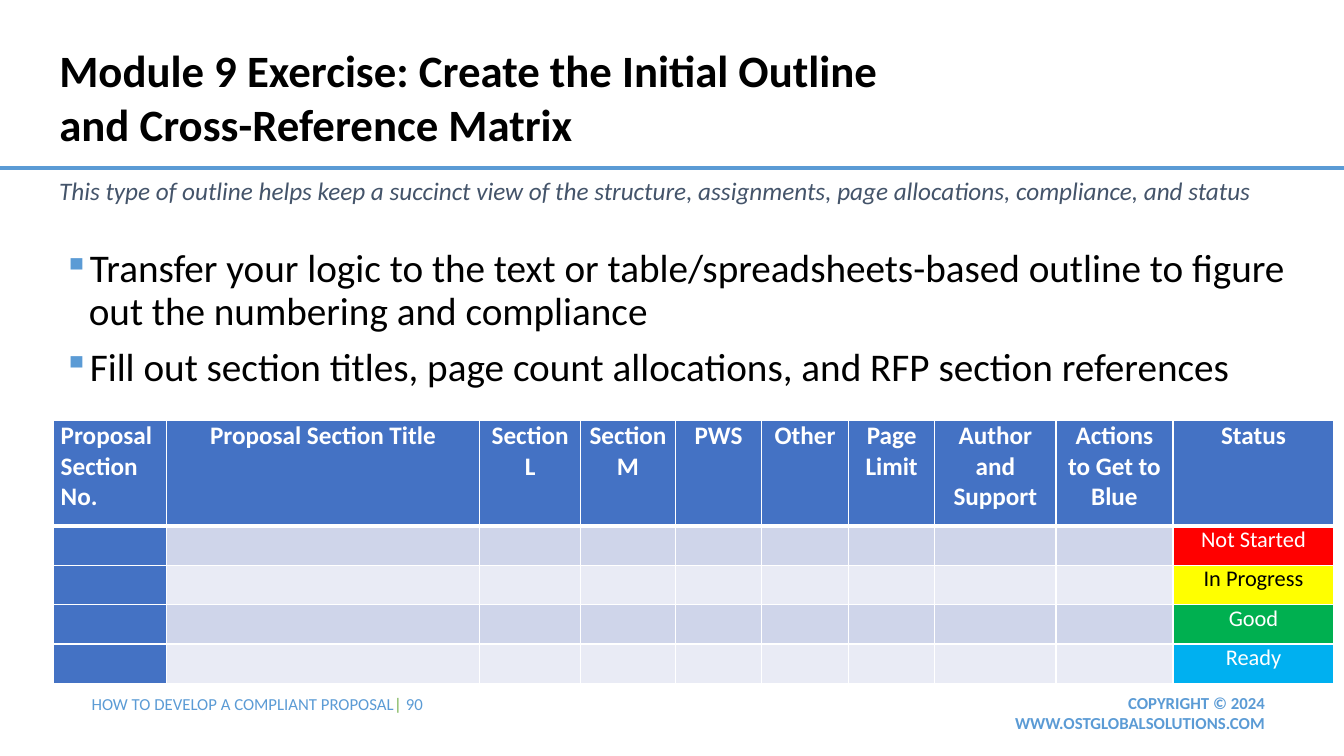
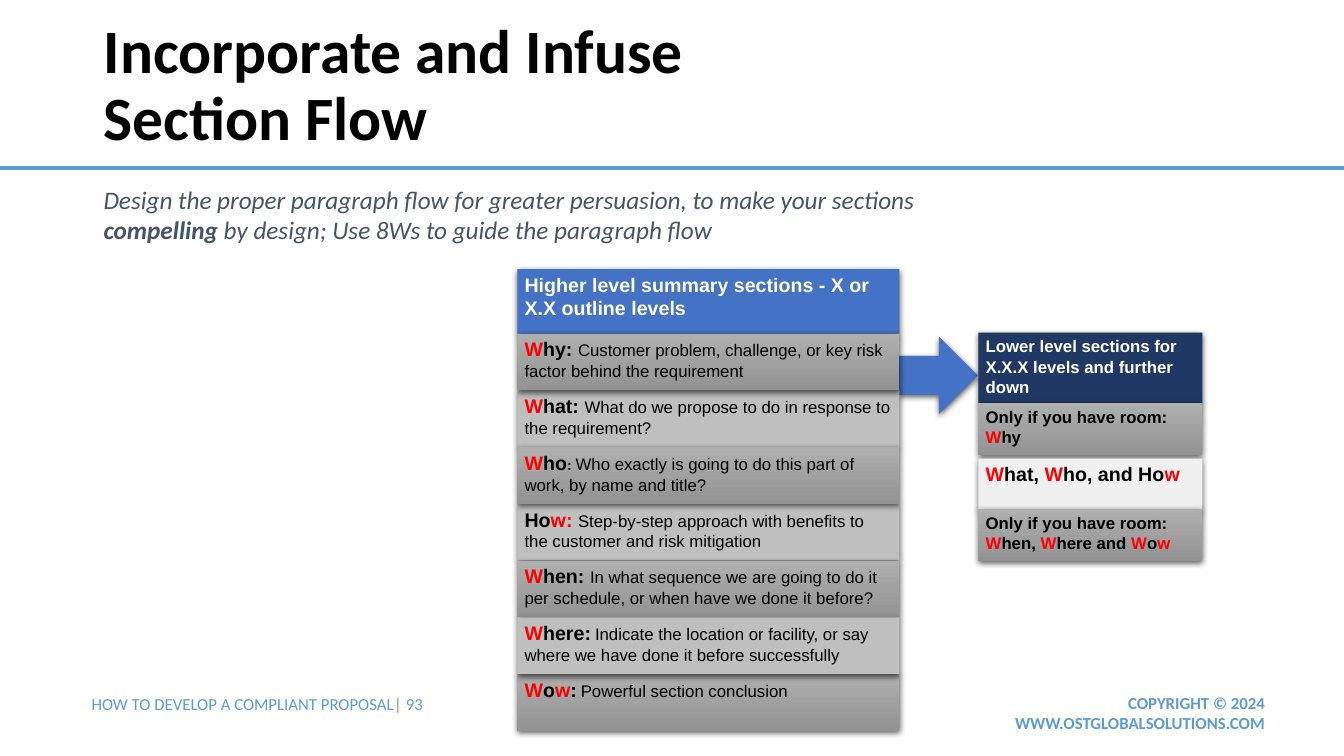
from pptx import Presentation
from pptx.dml.color import RGBColor
from pptx.enum.shapes import MSO_CONNECTOR, MSO_SHAPE
from pptx.enum.text import MSO_ANCHOR, MSO_AUTO_SIZE, PP_ALIGN
from pptx.oxml import parse_xml
from pptx.oxml.ns import nsdecls, qn
from pptx.util import Cm, Pt

BLACK, WHITE, RED = "000000", "FFFFFF", "FF0000"
SKY, BLUE, NAVY, SLATE, GREEN = "5B9BD5", "4472C4", "203864", "44546A", "70AD47"
SILVER, PALE = "BFBFBF", "F1F0F0"
STEEL = ("AFAFAF", "939393")  # gradient, top to bottom


def rgb(value):
    return RGBColor.from_string(value)


def write(para, spans, font="Calibri", italic=False):
    """Add runs given as (text, size, colour, bold)."""
    for text, size, color, bold in spans:
        span = para.add_run()
        span.text = text
        span.font.name, span.font.size = font, Pt(size)
        span.font.bold, span.font.italic = bold, italic
        span.font.color.rgb = rgb(color)


deck = Presentation()
deck.slide_width, deck.slide_height = Cm(33.87), Cm(19.05)

# Title, rule, subtitle and footers of every page
page_plans = [
    dict(number="90", title="Module 9 Exercise: Create the Initial Outline and Cross-Reference Matrix",
         title_at=(1.24, 0.84, 22.86, 3.18), title_size=32, title_spacing=1.0,
         subtitle_at=(1.24, 4.29, 32.6, 1.02),
         subtitle=[("This type of outline helps keep a succinct view of the structure, assignments, "
                    "page allocations, compliance, and status", 18, SLATE, False)]),
    dict(number="93", title="Incorporate and Infuse Section Flow",
         title_at=(2.36, 1.35, 19.4, 1.68), title_size=44, title_spacing=0.9,
         subtitle_at=(2.36, 4.52, 23.6, 1.8),
         subtitle=[("Design the proper paragraph flow for greater persuasion, to make your sections ",
                    18, SLATE, False),
                   ("compelling", 18, SLATE, True),
                   (" by design; Use 8Ws to guide the paragraph flow", 18, SLATE, False)]),
]
pages = []
for plan in page_plans:
    page = deck.slides.add_slide(deck.slide_layouts[5])
    pages.append(page)

    rule = page.shapes.add_connector(MSO_CONNECTOR.STRAIGHT, 0, Cm(4.24), deck.slide_width, Cm(4.24))
    rule.line.color.rgb = rgb(SKY)
    rule.line.width = Pt(3)
    rule._element.spPr.append(parse_xml(f"<a:effectLst {nsdecls('a')}/>"))

    title = page.shapes.title
    title.left, title.top, title.width, title.height = map(Cm, plan["title_at"])
    title.text_frame.word_wrap = True
    title.text_frame.auto_size = MSO_AUTO_SIZE.NONE
    title.text_frame.vertical_anchor = MSO_ANCHOR.MIDDLE
    para = title.text_frame.paragraphs[0]
    para.alignment = PP_ALIGN.LEFT
    para.line_spacing = plan["title_spacing"]
    write(para, [(plan["title"], plan["title_size"], BLACK, True)])

    texts = [
        (plan["subtitle_at"], PP_ALIGN.LEFT, True, plan["subtitle"]),
        ((2.06, 17.35, 12.24, 0.76), PP_ALIGN.LEFT, False,
         [("HOW TO DEVELOP A COMPLIANT PROPOSAL", 12, SKY, False),
          ("| ", 12, GREEN, False), (plan["number"], 12, SKY, False)]),
        ((25.2, 17.32, 6.93, 1.27), PP_ALIGN.RIGHT, False,
         [("COPYRIGHT © 2024 WWW.OSTGLOBALSOLUTIONS.COM", 12, SKY, True)]),
    ]
    for place, alignment, italic, spans in texts:
        box = page.shapes.add_textbox(*map(Cm, place))
        box.text_frame.word_wrap = True
        para = box.text_frame.paragraphs[0]
        para.alignment = alignment
        write(para, spans, italic=italic)

outline_page, flow_page = pages

# Outline page: bullets
bullets = [
    "Transfer your logic to the text or table/spreadsheets-based outline to figure out "
    "the numbering and compliance",
    "Fill out section titles, page count allocations, and RFP section references",
]
box = outline_page.shapes.add_textbox(Cm(1.35), Cm(6.15), Cm(31.9), Cm(4.2))
box.text_frame.word_wrap = True
for index, text in enumerate(bullets):
    para = box.text_frame.add_paragraph() if index else box.text_frame.paragraphs[0]
    properties = para._p.get_or_add_pPr()
    properties.set("marL", str(Cm(0.64)))
    properties.set("indent", str(-Cm(0.64)))
    for tag in (f'<a:buClr {nsdecls("a")}><a:srgbClr val="{SKY}"/></a:buClr>',
                f'<a:buSzPct {nsdecls("a")} val="90000"/>',
                f'<a:buChar {nsdecls("a")} char="▪"/>'):
        properties.append(parse_xml(tag))
    para.line_spacing = 0.9
    if index:
        para.space_before = Pt(10)
    write(para, [(text, 28, BLACK, False)])

# Outline page: cross-reference matrix
columns = [("Proposal Section No.", 2.84), ("Proposal Section Title", 7.9), ("Section L", 2.54),
           ("Section M", 2.39), ("PWS", 2.18), ("Other", 2.18), ("Page Limit", 2.18),
           ("Author and Support", 3.05), ("Actions to Get to Blue", 2.95), ("Status", 4.06)]
statuses = [("Not Started", RED, WHITE), ("In Progress", "FFFF00", BLACK),
            ("Good", "00B050", WHITE), ("Ready", "00B0F0", WHITE)]
row_heights = [2.67] + [0.99] * len(statuses)
last = len(columns) - 1
matrix = outline_page.shapes.add_table(len(row_heights), len(columns), Cm(1.35), Cm(10.59),
                                       Cm(sum(width for _, width in columns)),
                                       Cm(sum(row_heights))).table
for row, height in enumerate(row_heights):
    matrix.rows[row].height = Cm(height)
    for column, (heading, width) in enumerate(columns):
        matrix.columns[column].width = Cm(width)
        cell = matrix.cell(row, column)
        cell.margin_left = cell.margin_right = Cm(0.18)
        cell.margin_top = cell.margin_bottom = 0
        para = cell.text_frame.paragraphs[0]
        para.alignment = PP_ALIGN.CENTER if row or column else PP_ALIGN.LEFT
        fill = BLUE if row == 0 or column == 0 else ("E9EBF5", "CFD5EA")[row % 2]
        if row == 0:
            write(para, [(heading, 18, WHITE, True)])
        elif column == last:
            status, fill, color = statuses[row - 1]
            write(para, [(status, 16, color, False)])
        cell.fill.solid()
        cell.fill.fore_color.rgb = rgb(fill)
        # White borders, heavier under the heading row
        for position, side in enumerate("LRTB"):
            weight = 3 if (row, side) in ((0, "B"), (1, "T")) else 1
            cell._tc.get_or_add_tcPr().insert(position, parse_xml(
                f'<a:ln{side} {nsdecls("a")} w="{Pt(weight)}"><a:solidFill>'
                f'<a:srgbClr val="{WHITE}"/></a:solidFill></a:ln{side}>'))

# Flow page: the eight questions, as (fill, spans) from top to bottom
questions = [
    (STEEL, [("W", 14, RED, True), ("hy: ", 14, BLACK, True),
             ("Customer problem, challenge, or key risk factor behind the requirement", 12, BLACK, False)]),
    (SILVER, [("W", 14, RED, True), ("hat: ", 14, BLACK, True),
              ("What do we propose to do in response to the requirement?", 12, BLACK, False)]),
    (STEEL, [("W", 14, RED, True), ("ho", 14, BLACK, True), (": ", 10, BLACK, True),
             ("Who exactly is going to do this part of work, by name and title?", 12, BLACK, False)]),
    (SILVER, [("Ho", 14, BLACK, True), ("w: ", 14, RED, True),
              ("Step-by-step approach with benefits to the customer and risk mitigation", 12, BLACK, False)]),
    (STEEL, [("W", 14, RED, True), ("hen: ", 14, BLACK, True),
             ("In what sequence we are going to do it per schedule, or when have we done it before?",
              12, BLACK, False)]),
    (SILVER, [("W", 14, RED, True), ("here:", 14, BLACK, True), (" ", 10, BLACK, False),
              ("Indicate the location or facility, or say where we have done it before successfully",
               12, BLACK, False)]),
    (STEEL, [("W", 14, RED, True), ("o", 14, BLACK, True), ("w", 14, RED, True),
             (":", 14, BLACK, True), (" ", 10, BLACK, False),
             ("Powerful section conclusion", 12, BLACK, False)]),
]

# Flow page: cards as (shape, place, fill, spans), from back to front
cards = [
    (MSO_SHAPE.RIGHT_ARROW, (22.66, 8.48, 1.98, 1.96), BLUE, []),
    (MSO_SHAPE.RECTANGLE, (24.66, 8.38, 5.64, 1.78), NAVY,
     [("Lower level sections for X.X.X levels and further down", 12, WHITE, True)]),
    (MSO_SHAPE.RECTANGLE, (24.66, 10.16, 5.64, 1.3), STEEL,
     [("Only if you have room:", 12, BLACK, True), (" W", 12, RED, True), ("hy", 12, BLACK, True)]),
    (MSO_SHAPE.RECTANGLE, (24.66, 11.56, 5.64, 1.3), PALE,
     [("W", 14, RED, True), ("hat, ", 14, BLACK, True), ("W", 14, RED, True),
      ("ho, and Ho", 14, BLACK, True), ("w", 14, RED, True)]),
    (MSO_SHAPE.RECTANGLE, (24.66, 12.83, 5.64, 1.3), STEEL,
     [("Only if you have room:", 12, BLACK, True), (" W", 12, RED, True), ("hen,", 12, BLACK, True),
      (" W", 12, RED, True), ("here and", 12, BLACK, True), (" W", 12, RED, True),
      ("o", 12, BLACK, True), ("w", 12, RED, True)]),
]
for row in (1, 3, 4, 6, 5, 2):
    fill, spans = questions[row]
    cards.append((MSO_SHAPE.RECTANGLE, (13.04, 8.41 + 1.43 * row, 9.63, 1.42), fill, spans))
cards.append((MSO_SHAPE.RECTANGLE, (13.04, 6.78, 9.63, 1.63), BLUE,
              [("Higher level summary sections - X or X.X outline levels", 14, WHITE, True)]))
cards.append((MSO_SHAPE.RECTANGLE, (13.04, 8.41, 9.63, 1.42), *questions[0]))

for kind, place, fill, spans in cards:
    card = flow_page.shapes.add_shape(kind, *map(Cm, place))
    card.line.fill.background()
    if fill == STEEL:
        card.fill.gradient()
        card.fill.gradient_angle = 270
        for stop, color in zip(card.fill.gradient_stops, STEEL):
            stop.color.rgb = rgb(color)
    else:
        card.fill.solid()
        card.fill.fore_color.rgb = rgb(fill)
    card.shadow.inherit = False
    card._element.spPr.find(qn("a:effectLst")).append(parse_xml(
        f'<a:outerShdw {nsdecls("a")} blurRad="{Pt(4.5)}" dist="{Pt(1.5)}" dir="5400000" '
        f'rotWithShape="0"><a:srgbClr val="{BLACK}"><a:alpha val="63000"/></a:srgbClr></a:outerShdw>'))
    frame = card.text_frame
    frame.word_wrap = True
    frame.vertical_anchor = MSO_ANCHOR.TOP
    frame.margin_left = frame.margin_right = Cm(0.18)
    frame.margin_top = frame.margin_bottom = Cm(0.09)
    frame.paragraphs[0].alignment = PP_ALIGN.LEFT
    write(frame.paragraphs[0], spans, font="Arial")

deck.save("out.pptx")
